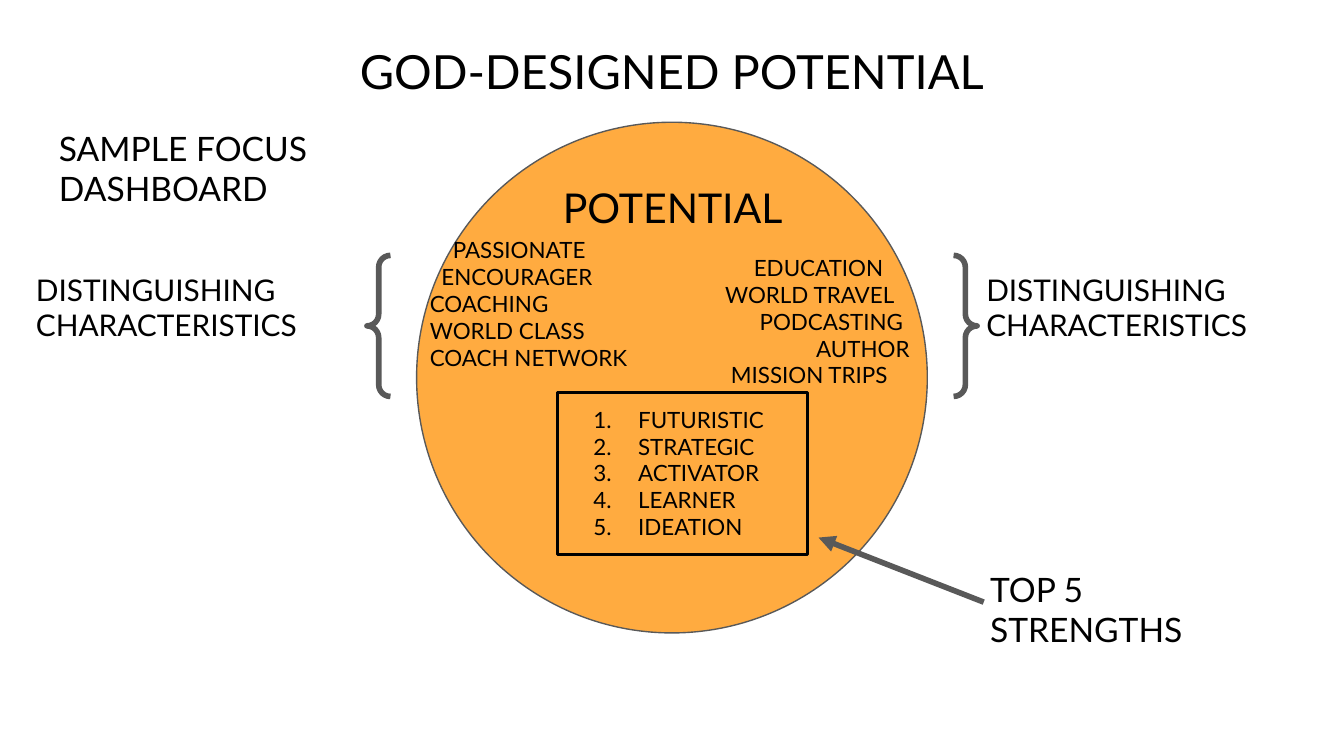
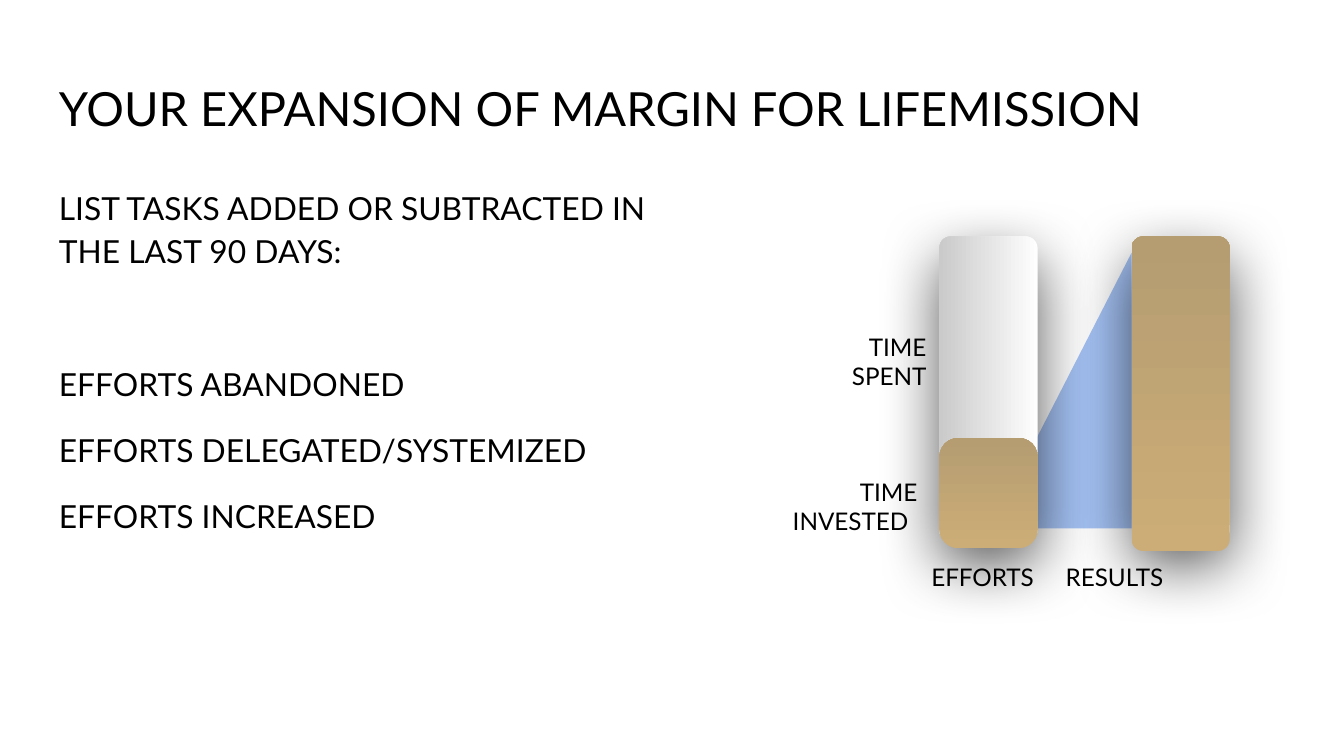
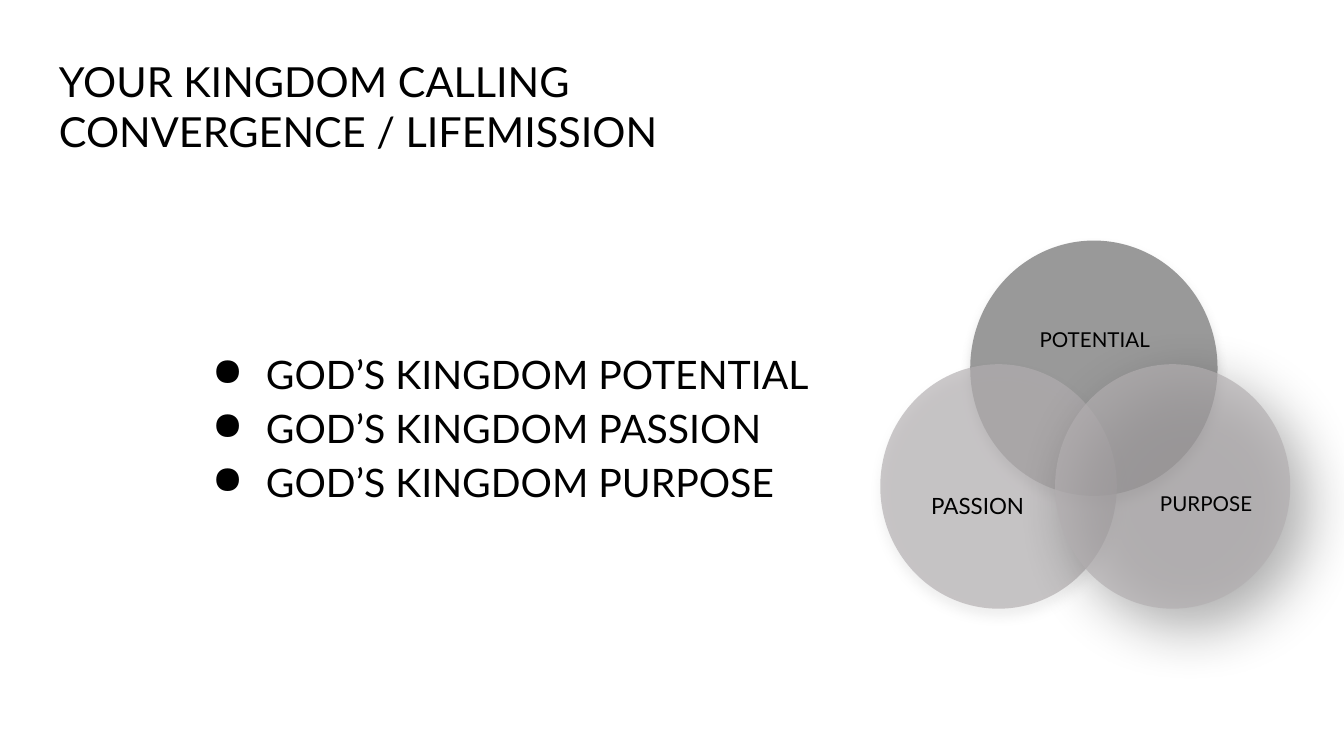
from dataclasses import dataclass

from pptx import Presentation
from pptx.dml.color import RGBColor
from pptx.enum.shapes import MSO_CONNECTOR, MSO_SHAPE
from pptx.enum.text import MSO_ANCHOR, PP_ALIGN
from pptx.oxml.ns import qn
from pptx.util import Pt
from lxml import etree

STRAIGHT = MSO_CONNECTOR.STRAIGHT
ELLIPSE = MSO_SHAPE.OVAL
RECTANGLE = MSO_SHAPE.RECTANGLE
ROUNDED = MSO_SHAPE.ROUNDED_RECTANGLE
BRACES = MSO_SHAPE.DOUBLE_BRACE
LEFT, CENTER, RIGHT = PP_ALIGN.LEFT, PP_ALIGN.CENTER, PP_ALIGN.RIGHT
TOP, MIDDLE = MSO_ANCHOR.TOP, MSO_ANCHOR.MIDDLE


@dataclass(frozen=True)
class Theme:
    font: str = "Lato"
    ink: str = "000000"
    rule: str = "595959"
    orange: str = "FFAB40"
    blue: str = "A4C2F4"
    gold: tuple = ("CCAD77", "B59D71")
    silver: tuple = ("FEFEFE", "CACACA")
    pale_silver: tuple = ("FEFEFE", "DDDDDD")
    gray: str = "999999"
    light_gray: str = "B2AEB0"
    soft_shadow: str = "929292"
    title: float = 25.2
    long_title: float = 22.2
    list_text: float = 21
    heading: float = 22
    callout: float = 18
    body: float = 17
    side: float = 16
    axis: float = 13
    small: float = 12
    tiny: float = 11
    inset: float = 7.2


THEME = Theme()


@dataclass
class Line:
    text: str
    margin: float = 0
    indent: float = 0
    before: float = 0
    after: float = 0
    align: PP_ALIGN = None


def rgb(color):
    return RGBColor.from_string(color)


def points(*lengths):
    return [Pt(length) for length in lengths]


def add_child(parent, tag, **attributes):
    return etree.SubElement(parent, qn(tag), {k: str(v) for k, v in attributes.items()})


def write(frame, lines, size, align=LEFT, anchor=TOP, spacing=None, bullet=None, tab=None):
    frame.word_wrap = True
    frame.vertical_anchor = anchor
    frame.margin_left = frame.margin_right = Pt(THEME.inset)
    frame.margin_top = frame.margin_bottom = Pt(THEME.inset)
    for index, line in enumerate(lines):
        if isinstance(line, str):
            line = Line(line)
        paragraph = frame.add_paragraph() if index else frame.paragraphs[0]
        paragraph.add_run().text = line.text
        paragraph.alignment = line.align or align
        if spacing:
            paragraph.line_spacing = spacing
        if line.before:
            paragraph.space_before = Pt(line.before)
        if line.after:
            paragraph.space_after = Pt(line.after)
        properties = paragraph._p.get_or_add_pPr()
        properties.set("marL", str(Pt(line.margin)))
        properties.set("indent", str(Pt(line.indent)))
        if bullet == "number":
            add_child(properties, "a:buAutoNum", type="arabicPeriod")
        elif bullet:
            add_child(properties, "a:buChar", char=bullet)
        if tab:
            add_child(add_child(properties, "a:tabLst"), "a:tab", pos=Pt(tab), algn="l")
        paragraph.font.name = THEME.font
        paragraph.font.size = Pt(size)
        paragraph.font.color.rgb = rgb(THEME.ink)


def add_text(slide, box, lines, size, **style):
    write(slide.shapes.add_textbox(*points(*box)).text_frame, lines, size, **style)


def add_title(slide, top, lines, size=THEME.title, height=45.4, align=LEFT):
    add_text(slide, (24.5, top, 671, height), lines, size, align=align)


def paint(shape, fill=None, alpha=None, line=None, width=0.75, shadow=None):
    shape.shadow.inherit = False
    if fill:
        shape.fill.solid()
        shape.fill.fore_color.rgb = rgb(fill)
    else:
        shape.fill.background()
    if line:
        shape.line.color.rgb = rgb(line)
        shape.line.width = Pt(width)
    else:
        shape.line.fill.background()
    properties = shape._element.spPr
    if alpha:
        color = properties.find(qn("a:solidFill")).find(qn("a:srgbClr"))
        add_child(color, "a:alpha", val=alpha * 1000)
    if shadow:
        tint, opacity, blur, distance, angle = shadow
        outer = add_child(properties.find(qn("a:effectLst")), "a:outerShdw", blurRad=Pt(blur),
                          dist=Pt(distance), dir=angle * 60000, algn="bl", rotWithShape=0)
        add_child(add_child(outer, "a:srgbClr", val=tint), "a:alpha", val=opacity * 1000)


def add_figure(slide, kind, box, **style):
    shape = slide.shapes.add_shape(kind, *points(*box))
    paint(shape, **style)
    return shape


def add_bar(slide, box, colors, angle, rounding=0.118, shadow=None):
    bar = add_figure(slide, ROUNDED, box, shadow=shadow)
    bar.adjustments[0] = rounding
    bar.fill.gradient()
    bar.fill.gradient_angle = angle
    for stop, color in zip(bar.fill.gradient_stops, colors):
        stop.color.rgb = rgb(color)


def add_arrow(slide, start, end):
    arrow = slide.shapes.add_connector(STRAIGHT, *points(*start, *end))
    arrow.line.color.rgb = rgb(THEME.rule)
    arrow.line.width = Pt(3)
    add_child(arrow.line._get_or_add_ln(), "a:tailEnd", type="triangle")
    add_child(arrow._element.spPr, "a:effectLst")


def add_wedge(slide, corners):
    start, *others = [points(*corner) for corner in corners]
    builder = slide.shapes.build_freeform(*start)
    builder.add_line_segments(others, close=True)
    paint(builder.convert_to_shape(), fill=THEME.blue)


def build_potential(slide):
    add_title(slide, 15.8, ["GOD-DESIGNED POTENTIAL"], align=CENTER)
    add_figure(slide, ELLIPSE, (223.2, 65.5, 273.6, 273.6), fill=THEME.orange, line=THEME.rule)
    add_text(slide, (281.5, 90.7, 157.7, 41), ["POTENTIAL"], THEME.heading, align=CENTER)

    strengths = ["FUTURISTIC", "STRATEGIC", "ACTIVATOR", "LEARNER", "IDEATION"]
    strengths_box = add_figure(slide, RECTANGLE, (298.8, 210.2, 133.9, 87.1),
                               line=THEME.ink, width=1.5)
    write(strengths_box.text_frame, [Line(name, 36, -24) for name in strengths],
          THEME.small, bullet="number")

    for left in (12.2, 521.3):
        add_text(slide, (left, 138.2, 173.5, 53.3),
                 ["DISTINGUISHING", "CHARACTERISTICS"], THEME.side)
    add_arrow(slide, (527, 322.6), (438.5, 288))
    add_text(slide, (523.4, 297.4, 168.5, 58.3), ["TOP 5", "STRENGTHS"], THEME.callout)
    add_text(slide, (24.5, 61.2, 173.5, 58.3), ["SAMPLE FOCUS", "DASHBOARD"], THEME.callout)

    traits = [Line("PASSIONATE", 12.3), Line("ENCOURAGER", 6.2), "COACHING",
              "WORLD CLASS COACH NETWORK"]
    experiences = [Line("EDUCATION", 24.6), Line("WORLD TRAVEL", 9.2), Line("PODCASTING", 27.7),
                   Line("AUTHOR", 58), Line("MISSION TRIPS", 12.3)]
    add_text(slide, (223.2, 119.5, 125.3, 116.6), traits, THEME.small)
    add_text(slide, (372.2, 128.9, 125.3, 116.6), experiences, THEME.small)
    add_figure(slide, BRACES, (196.6, 136.8, 326.9, 75.6), line=THEME.rule, width=3)


def build_margin(slide):
    add_title(slide, 35.3, ["YOUR EXPANSION OF MARGIN FOR LIFEMISSION"])
    tasks = [Line("LIST TASKS ADDED OR SUBTRACTED IN THE LAST 90 DAYS:"),
             Line("EFFORTS ABANDONED", before=47.5),
             Line("EFFORTS DELEGATED/SYSTEMIZED", before=12),
             Line("EFFORTS INCREASED", before=12, after=12)]
    add_text(slide, (24.5, 90.7, 335.5, 269.3), tasks, THEME.body, spacing=1.15)

    efforts, results, top, width, height = 503.3, 606.2, 126.7, 52.6, 163.4
    bar_shadow = (THEME.ink, 66, 34, 12, 90)
    add_wedge(slide, [(results, 135.4), (results, 283), (530.6, 283)])
    add_bar(slide, (results, top, width, height), THEME.pale_silver, 180, shadow=bar_shadow)
    add_bar(slide, (efforts, top, width, height), THEME.silver, 180, shadow=bar_shadow)
    add_bar(slide, (efforts, 234.7, width, 59), THEME.gold, 90, rounding=0.19)
    add_bar(slide, (results, top, width, 168.5), THEME.gold, 90)

    times = [Line("TIME", align=RIGHT), Line("SPENT", align=RIGHT),
             Line("TIME INVESTED", indent=36, before=46.8)]
    add_text(slide, (417.6, 170.6, 85.7, 124.6), times, THEME.axis)
    add_text(slide, (491.8, 293.8, 178.6, 30.2), ["EFFORTS\tRESULTS"], THEME.axis, tab=95)


def build_calling(slide):
    add_title(slide, 23, ["YOUR KINGDOM CALLING", "CONVERGENCE / LIFEMISSION"],
              THEME.long_title, height=72)
    callings = [Line(f"GOD’S KINGDOM {name}", 36, -28.8)
                for name in ("POTENTIAL", "PASSION", "PURPOSE")]
    add_text(slide, (99.4, 128.9, 596.2, 197.3), callings, THEME.list_text,
             anchor=MIDDLE, spacing=1.15, bullet="●")

    circles = [
        ((519.8, 128.9, 132.5, 136.8), THEME.gray, None, (THEME.soft_shadow, 35, 6, 4, 90)),
        ((471.6, 195.1, 126.7, 131), THEME.light_gray, 67, (THEME.soft_shadow, 22, 6, 4, 90)),
        ((565.2, 195.1, 126, 131), THEME.light_gray, 67, (THEME.ink, 48, 32, 14, 48)),
    ]
    for box, fill, alpha, shadow in circles:
        add_figure(slide, ELLIPSE, box, fill=fill, alpha=alpha, shadow=shadow)

    labels = [("PASSION", (487.4, 256.3, 72.7, 28.8), THEME.small),
              ("PURPOSE", (609.8, 256.3, 72.7, 28), THEME.tiny),
              ("POTENTIAL", (542.2, 168.5, 88.6, 28), THEME.tiny)]
    for name, box, size in labels:
        add_text(slide, box, [name], size, align=CENTER)


def main():
    deck = Presentation()
    deck.slide_width, deck.slide_height = points(720, 405)
    blank = deck.slide_layouts[6]
    for build in (build_potential, build_margin, build_calling):
        build(deck.slides.add_slide(blank))
    deck.save("out.pptx")


if __name__ == "__main__":
    main()
